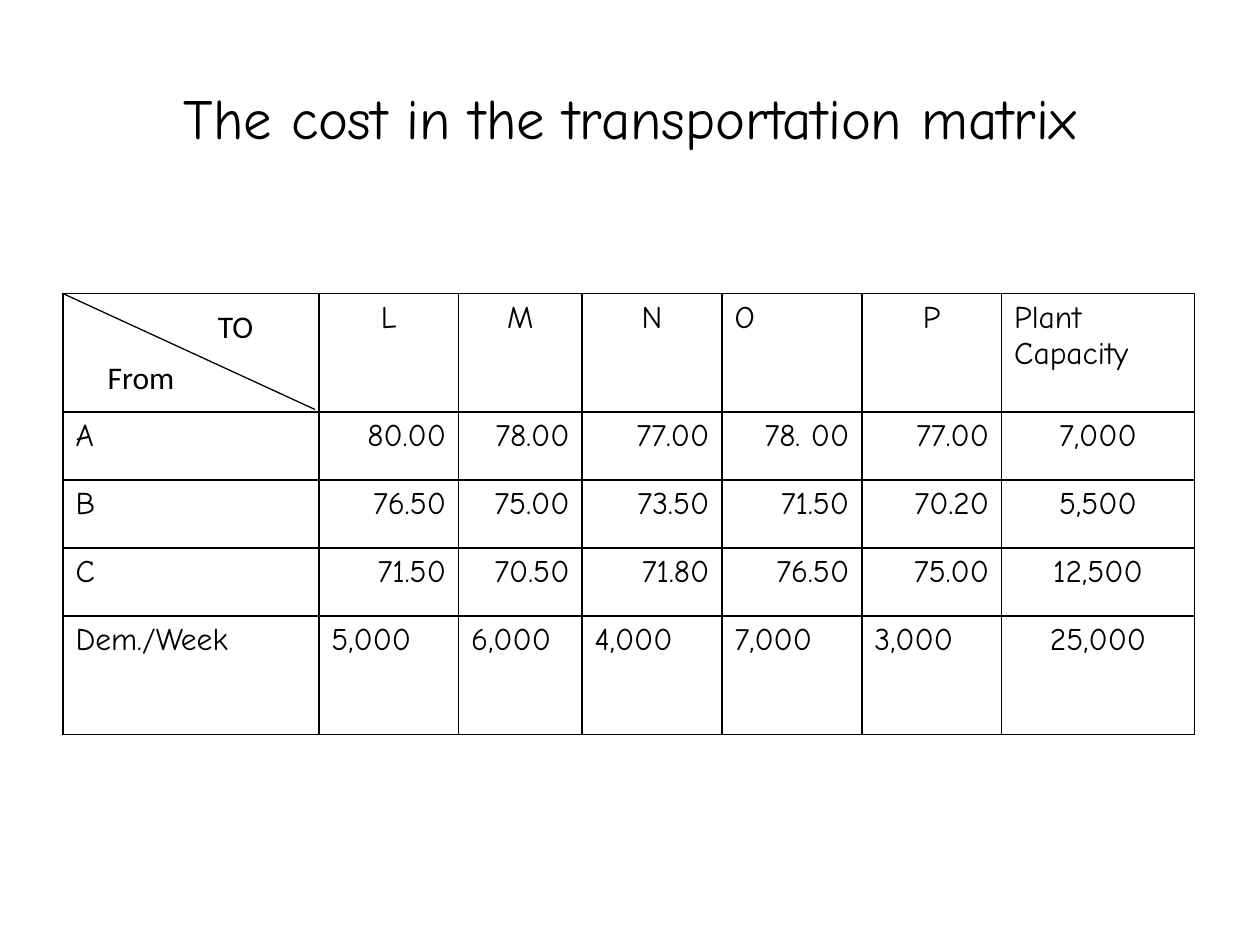
from dataclasses import dataclass

from lxml import etree
from pptx import Presentation
from pptx.dml.color import RGBColor
from pptx.enum import shapes, text
from pptx.oxml import ns
from pptx.util import Inches, Pt


@dataclass(frozen=True)
class Theme:
    ink: RGBColor = RGBColor(0, 0, 0)
    font: str = "Comic Neue"
    label_font: str = "Calibri"
    title_size: float = 32.4
    body_size: float = 18
    border: float = 1
    diagonal: float = 0.75


THEME = Theme()
ALIGN = text.PP_ALIGN

COL_WIDTHS = [2.03, 1.11, 0.98, 1.11, 1.11, 1.11, 1.53]
ROW_HEIGHTS = [0.94, 0.54, 0.54, 0.54, 0.94]
COSTS = [
    ["", "L", "M", "N", "O", "P", "Plant\nCapacity"],
    ["A", "80.00", "78.00", "77.00", "78. 00", "77.00", "7,000"],
    ["B", "76.50", "75.00", "73.50", "71.50", "70.20", "5,500"],
    ["C", "71.50", "70.50", "71.80", "76.50", "75.00", "12,500"],
    ["Dem./Week", "5,000", "6,000", "4,000", "7,000", "3,000", "25,000"],
]


def write(tf, content, *, size=THEME.body_size, font=THEME.font, align=ALIGN.CENTER):
    """Put content into a text frame, one paragraph per line."""
    for i, line in enumerate(content.split("\n")):
        p = tf.paragraphs[0] if i == 0 else tf.add_paragraph()
        p.alignment = align
        r = p.add_run()
        r.text = line
        r.font.size = Pt(size)
        r.font.name = font
        r.font.color.rgb = THEME.ink


def add_text(s, content, left, top, width, height, *, wrap=False, **fmt):
    sp = s.shapes.add_textbox(Inches(left), Inches(top), Inches(width), Inches(height))
    tf = sp.text_frame
    tf.word_wrap = wrap
    tf.vertical_anchor = text.MSO_ANCHOR.MIDDLE
    write(tf, content, **fmt)


def add_line(s, start, end):
    x1, y1, x2, y2 = (Inches(v) for v in (*start, *end))
    line = s.shapes.add_connector(shapes.MSO_CONNECTOR.STRAIGHT, x1, y1, x2, y2)
    line.line.color.rgb = THEME.ink
    line.line.width = Pt(THEME.diagonal)
    etree.SubElement(line._element.spPr, ns.qn("a:effectLst"))


def set_borders(cell):
    tc_pr = cell._tc.get_or_add_tcPr()
    for side in ("a:lnL", "a:lnR", "a:lnT", "a:lnB"):
        ln = etree.SubElement(tc_pr, ns.qn(side), w=str(Pt(THEME.border)))
        fill = etree.SubElement(ln, ns.qn("a:solidFill"))
        etree.SubElement(fill, ns.qn("a:srgbClr"), val=str(THEME.ink))


def cell_align(row, col):
    """Totals and headings are centred, costs right, labels and demand justified."""
    last_row, last_col = len(COSTS) - 1, len(COL_WIDTHS) - 1
    if col == last_col:
        return ALIGN.LEFT if row == 0 else ALIGN.CENTER
    if col == 0 or row == last_row or COSTS[row][col] == "O":
        return ALIGN.JUSTIFY
    return ALIGN.CENTER if row == 0 else ALIGN.RIGHT


def add_cost_table(s, left, top):
    table = s.shapes.add_table(
        len(ROW_HEIGHTS), len(COL_WIDTHS), Inches(left), Inches(top),
        Inches(sum(COL_WIDTHS)), Inches(sum(ROW_HEIGHTS))).table
    table.first_row = table.horz_banding = False
    for column, width in zip(table.columns, COL_WIDTHS):
        column.width = Inches(width)
    for row, height in zip(table.rows, ROW_HEIGHTS):
        row.height = Inches(height)
    for i, values in enumerate(COSTS):
        for j, value in enumerate(values):
            cell = table.cell(i, j)
            set_borders(cell)
            cell.fill.background()
            if value:
                write(cell.text_frame, value, align=cell_align(i, j))


def main():
    prs = Presentation()
    prs.slide_width, prs.slide_height = Inches(10), Inches(7.5)
    s = prs.slides.add_slide(prs.slide_layouts[6])
    add_text(s, "The cost in the transportation matrix", 0.5, 0.3, 9, 1.25,
             wrap=True, size=THEME.title_size)
    add_cost_table(s, 0.5, 2.33)
    add_text(s, "From", 0.58, 2.83, 1.08, 0.33, font=THEME.label_font)
    add_line(s, (0.5, 2.33), (2.5, 3.25))
    add_text(s, "TO", 1.33, 2.42, 1.08, 0.33, font=THEME.label_font)
    prs.save("out.pptx")


if __name__ == "__main__":
    main()
